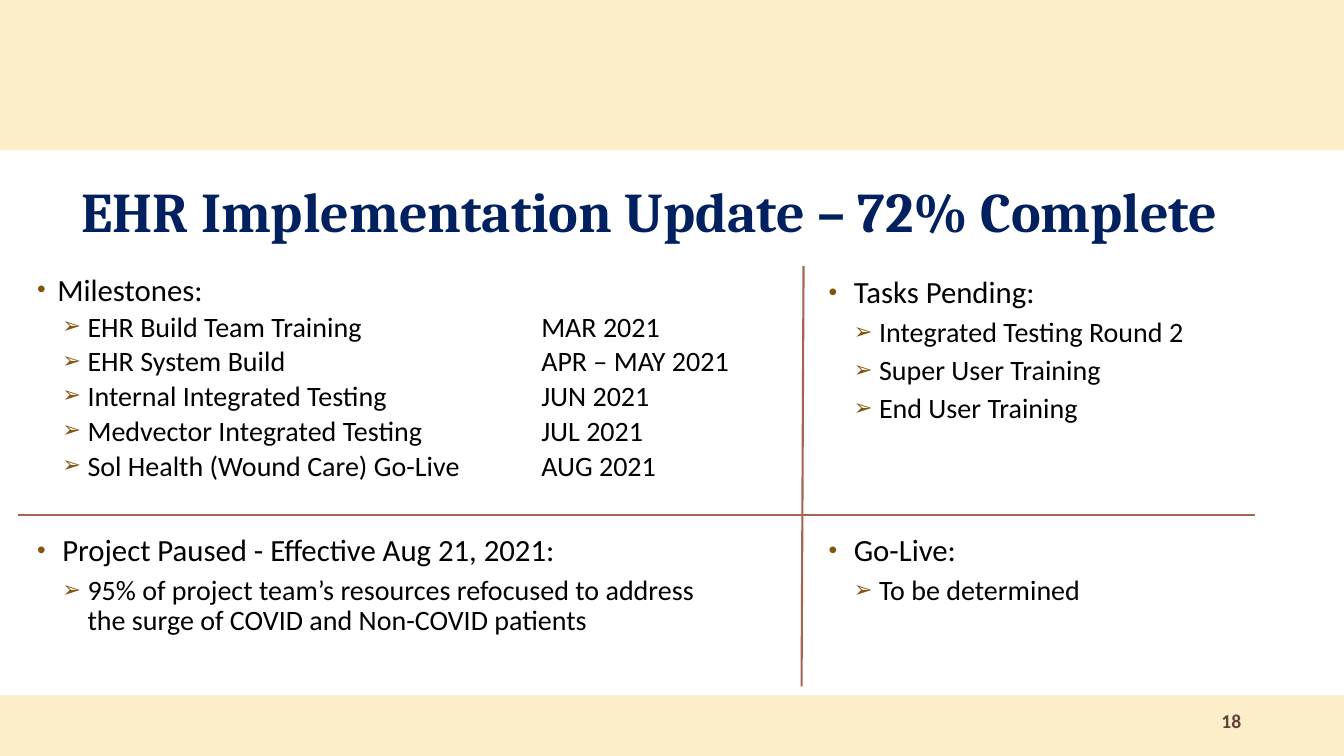
from lxml.etree import SubElement
from pptx import Presentation
from pptx.dml.color import RGBColor
from pptx.enum.shapes import MSO_CONNECTOR, MSO_SHAPE
from pptx.enum.text import MSO_ANCHOR, PP_ALIGN
from pptx.oxml.ns import qn
from pptx.util import Inches, Pt

WIDE, HIGH = 13.33, 7.5
TITLE = "EHR Implementation Update – 72% Complete"
PAGE = "18"
BANDS = [(0, 1.49), (6.9, 0.6)]
RULES = [(7.97, 2.64, 7.95, 6.81), (0.18, 5.11, 12.45, 5.11)]
STEPS = [
    ("EHR Build Team Training", "MAR 2021"),
    ("EHR System Build", "APR – MAY 2021"),
    ("Internal Integrated Testing", "JUN 2021"),
    ("Medvector Integrated Testing", "JUL 2021"),
    ("Sol Health (Wound Care) Go-Live", "AUG 2021"),
]
PANELS = [
    ((0.27, 2.71, 7.12, 2.39), 0.2, 0.8, "Milestones:",
     ["\t".join(step) for step in STEPS]),
    ((0.27, 5.26, 7.12, 1.17), 0.25, 0.9,
     "Project Paused - Effective Aug 21, 2021:",
     ["95% of project team’s resources refocused to address "
      "the surge of COVID and Non-COVID patients"]),
    ((8.12, 2.7, 4.79, 2.39), 0.25, 0.9, "Tasks Pending:",
     ["Integrated Testing Round 2", "Super User Training",
      "End User Training"]),
    ((8.12, 5.26, 4.79, 1.02), 0.25, 0.9, "Go-Live:",
     ["To be determined"]),
]
CREAM, NAVY, BLACK = "FBEEC9", "002060", "000000"
RUST, BROWN, GOLD = "A5644E", "624139", "85540A"
TAB = 5


def paint(target, color):
    """Set a solid colour on a fill, or on a font's or line's colour."""
    if hasattr(target, "solid"):
        target.solid()
        target = target.fore_color
    target.rgb = RGBColor.from_string(color)


def add_box(slide, place, anchor=MSO_ANCHOR.TOP):
    """Add a wrapping text box and return its frame."""
    frame = slide.shapes.add_textbox(*map(Inches, place)).text_frame
    frame.word_wrap = True
    frame.vertical_anchor = anchor
    return frame


def bullet(para, mark, left, hang):
    """Give a paragraph a hanging bullet and a tab stop for dates."""
    props = para._p.get_or_add_pPr()
    props.set("marL", str(Inches(left)))
    props.set("indent", str(-Inches(hang)))
    tint = SubElement(props, qn("a:buClr"))
    SubElement(tint, qn("a:srgbClr"), val=GOLD)
    SubElement(props, qn("a:buSzPct"), val="80000")
    SubElement(props, qn("a:buFont"), typeface="Arial")
    SubElement(props, qn("a:buChar"), char=mark)
    if "\t" in para.text:
        tabs = SubElement(props, qn("a:tabLst"))
        SubElement(tabs, qn("a:tab"), pos=str(Inches(TAB)), algn="l")


def write(para, text, size=20, face="Calibri", color=BLACK, bold=False,
          align=PP_ALIGN.LEFT, mark=None, left=0.5, hang=0.25,
          pitch=1.0, before=0):
    """Fill one paragraph with formatted text."""
    run = para.add_run()
    run.text = text
    if mark:
        bullet(para, mark, left, hang)
    para.alignment = align
    para.line_spacing = pitch
    para.space_before = Pt(before)
    run.font.size, run.font.name, run.font.bold = Pt(size), face, bold
    paint(run.font.color, color)


def add_panel(slide, place, left, pitch, head, items):
    """Add a heading with its bulleted items."""
    frame = add_box(slide, place)
    write(frame.paragraphs[0], head, size=22, mark="•", left=left,
          hang=left, pitch=pitch)
    for item in items:
        write(frame.add_paragraph(), item, mark="➢", pitch=pitch,
              before=5.6)


def add_band(slide, top, height):
    """Add a full-width colour band."""
    band = slide.shapes.add_shape(
        MSO_SHAPE.RECTANGLE, 0, Inches(top), Inches(WIDE), Inches(height))
    band.shadow.inherit = False
    paint(band.fill, CREAM)
    band.line.fill.background()


def add_rule(slide, ends):
    """Add a thin dividing line."""
    rule = slide.shapes.add_connector(
        MSO_CONNECTOR.STRAIGHT, *map(Inches, ends))
    paint(rule.line.fill, RUST)
    rule.line.width = Pt(1.5)
    SubElement(rule._element.spPr, qn("a:effectLst"))


def main():
    """Build and save the slide."""
    deck = Presentation()
    deck.slide_width, deck.slide_height = Inches(WIDE), Inches(HIGH)
    slide = deck.slides.add_slide(deck.slide_layouts[6])
    for band in BANDS:
        add_band(slide, *band)
    title = add_box(slide, (0.71, 1.6, 12.62, 0.96), MSO_ANCHOR.MIDDLE)
    write(title.paragraphs[0], TITLE, size=40, face="Cambria",
          color=NAVY, bold=True)
    for panel in PANELS:
        add_panel(slide, *panel)
    for ends in RULES:
        add_rule(slide, ends)
    page = add_box(slide, (8.83, 6.95, 3.58, 0.4), MSO_ANCHOR.MIDDLE)
    write(page.paragraphs[0], PAGE, size=14, color=BROWN, bold=True,
          align=PP_ALIGN.RIGHT)
    deck.save("out.pptx")


if __name__ == "__main__":
    main()
